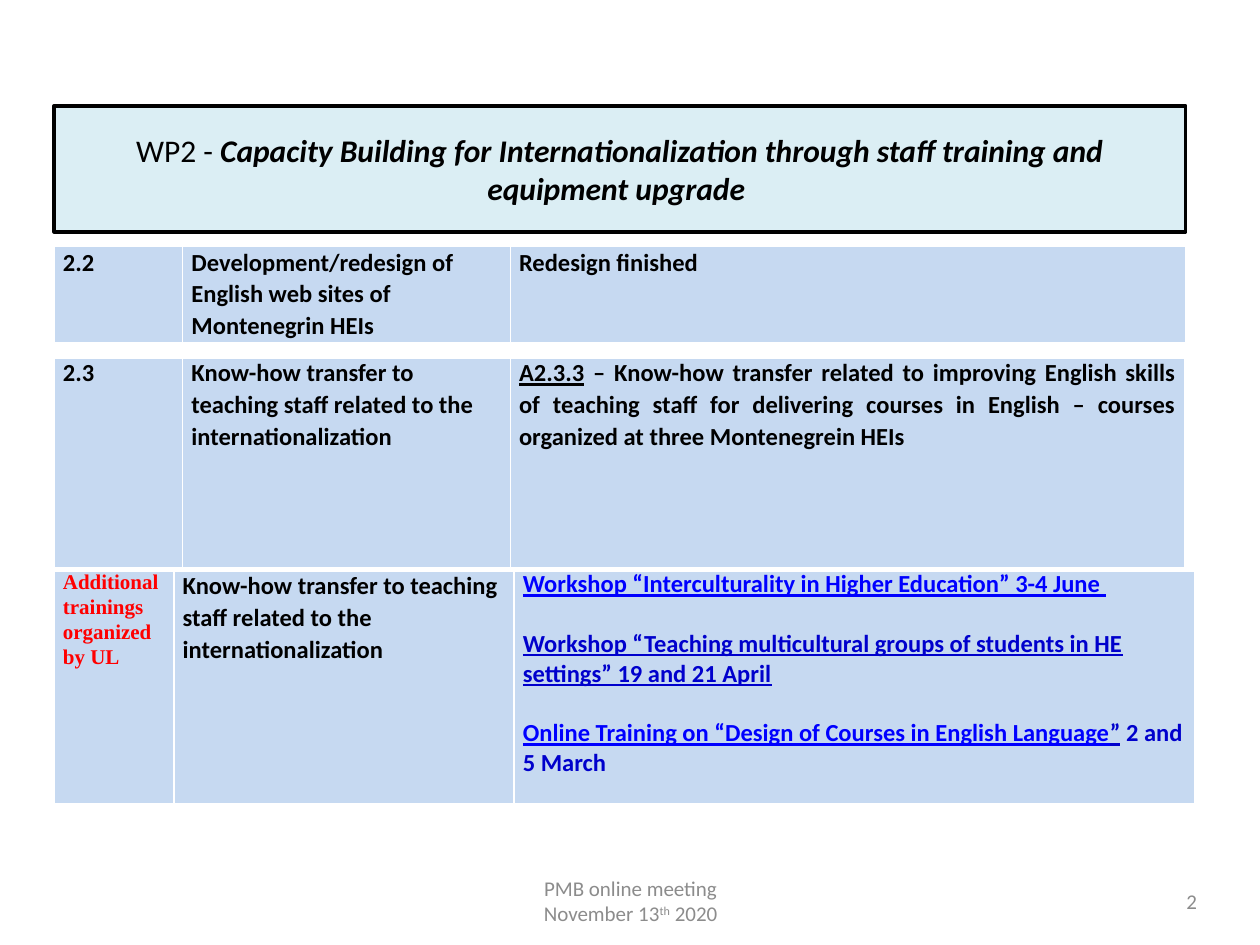
from dataclasses import dataclass

from lxml import etree
from pptx import Presentation
from pptx.dml.color import RGBColor
from pptx.enum.shapes import MSO_SHAPE
from pptx.enum.text import MSO_ANCHOR, PP_ALIGN
from pptx.oxml.ns import qn
from pptx.util import Inches, Pt

RECTANGLE = MSO_SHAPE.RECTANGLE
MIDDLE = MSO_ANCHOR.MIDDLE
LEFT, CENTER, RIGHT = PP_ALIGN.LEFT, PP_ALIGN.CENTER, PP_ALIGN.RIGHT
JUSTIFY = PP_ALIGN.JUSTIFY


@dataclass(frozen=True)
class Theme:
    font: str = "Calibri"
    accent_font: str = "Times New Roman"
    ink: str = "000000"
    muted: str = "8C8C8C"
    alert: str = "FF0000"
    link: str = "0000FF"
    link_dark: str = "0000CC"
    banner: str = "DBEEF4"
    cell: str = "C6D9F1"
    border: str = "FFFFFF"
    title_size: int = 18
    body_size: int = 14
    small_size: int = 12


@dataclass
class Span:
    text: str
    color: str = ""
    underline: bool = False
    emphasis: bool = False
    superscript: bool = False


@dataclass
class Para:
    spans: list
    size: int
    color: str
    font: str = Theme.font
    bold: bool = False
    align: PP_ALIGN = LEFT
    line: float = 1.0
    before: int = 0


class SlideBuilder:
    def __init__(self, page, theme):
        self.page = page
        self.theme = theme

    def fill_text(self, frame, paras):
        frame.word_wrap = True
        for index, item in enumerate(paras):
            para = frame.add_paragraph() if index else frame.paragraphs[0]
            para.alignment = item.align
            para.line_spacing = item.line
            para.space_before = Pt(item.before)
            para.font.name = item.font
            para.font.size = Pt(item.size)
            para.font.bold = item.bold
            para.font.color.rgb = RGBColor.from_string(item.color)
            for part in item.spans:
                span = para.add_run()
                span.text = part.text
                if part.color:
                    span.font.color.rgb = RGBColor.from_string(part.color)
                if part.underline:
                    span.font.underline = True
                if part.emphasis:
                    span.font.bold = span.font.italic = True
                if part.superscript:
                    span.font._element.set("baseline", "30000")

    def text(self, left, top, width, height, paras, left_inset=0):
        box = self.page.shapes.add_textbox(
            Inches(left), Inches(top), Inches(width), Inches(height))
        frame = box.text_frame
        frame.vertical_anchor = MIDDLE
        frame.margin_left, frame.margin_right = Inches(left_inset), 0
        self.fill_text(frame, paras)

    def banner(self, left, top, width, height, para):
        box = self.page.shapes.add_shape(
            RECTANGLE, Inches(left), Inches(top), Inches(width), Inches(height))
        box.shadow.inherit = False
        box.fill.solid()
        box.fill.fore_color.rgb = RGBColor.from_string(self.theme.banner)
        box.line.color.rgb = RGBColor.from_string(self.theme.ink)
        box.line.width = Pt(2)
        box.text_frame.vertical_anchor = MIDDLE
        self.fill_text(box.text_frame, [para])

    def border(self, cell):
        properties = cell._tc.get_or_add_tcPr()
        for side, width in (("L", 1), ("R", 1), ("T", 3), ("B", 3)):
            line = etree.SubElement(properties, qn(f"a:ln{side}"), w=str(Pt(width)))
            fill = etree.SubElement(line, qn("a:solidFill"))
            etree.SubElement(fill, qn("a:srgbClr"), val=self.theme.border)

    def row_table(self, left, top, height, widths, contents, top_inset=0):
        table = self.page.shapes.add_table(
            1, len(widths), Inches(left), Inches(top),
            Inches(sum(widths)), Inches(height)).table
        table.first_row = table.horz_banding = False
        table.rows[0].height = Inches(height)
        for column, width, cell, paras in zip(
                table.columns, widths, table.rows[0].cells, contents):
            column.width = Inches(width)
            cell.margin_left = cell.margin_right = Inches(0.07)
            cell.margin_top, cell.margin_bottom = Inches(top_inset), 0
            self.border(cell)
            cell.fill.solid()
            cell.fill.fore_color.rgb = RGBColor.from_string(self.theme.cell)
            self.fill_text(cell.text_frame, paras)


def main():
    theme = Theme()
    deck = Presentation()
    deck.slide_width, deck.slide_height = Inches(10), Inches(7.5)
    builder = SlideBuilder(deck.slides.add_slide(deck.slide_layouts[6]), theme)

    def footer(align, *spans):
        return Para(spans, theme.small_size, theme.muted, align=align)

    def body(*spans, align=LEFT):
        return [Para(spans, theme.body_size, theme.ink, bold=True,
                     align=align, line=1.07)]

    def workshop(*spans, before=17):
        return Para(spans, theme.body_size, theme.link_dark, bold=True, before=before)

    left = 0.43
    know_how = body(Span("Know-how transfer to teaching staff related to the "
                         "internationalization"))

    builder.text(2.09, 6.95, 5.83, 0.4, [
        footer(CENTER, Span("PMB online meeting")),
        footer(CENTER, Span("November 13"), Span("th", superscript=True),
               Span(" 2020"))])
    builder.text(7.99, 6.95, 1.51, 0.4, [footer(RIGHT, Span("2"))], left_inset=0.1)

    builder.banner(left, 0.84, 8.98, 1, Para(
        [Span("WP2 - "),
         Span("Capacity Building for Internationalization through staff training "
              "and equipment upgrade ", emphasis=True)],
        theme.title_size, theme.ink, align=CENTER))

    builder.row_table(left, 1.94, 0.79, [1.02, 2.6, 5.36], [
        body(Span("2.2")),
        body(Span("Development/redesign of English web sites of Montenegrin HEIs")),
        body(Span("Redesign finished"))], top_inset=0.01)

    builder.row_table(left, 2.83, 1.88, [1.02, 2.6, 5.35], [
        body(Span("2.3")),
        know_how,
        body(Span("A2.3.3", underline=True),
             Span(" – Know-how transfer related to improving English skills of "
                  "teaching staff for delivering courses in English – courses "
                  "organized at three Montenegrein HEIs"), align=JUSTIFY)])

    builder.row_table(left, 4.52, 1.87, [0.95, 2.7, 5.4], [
        [Para([Span("Additional trainings organized by UL")], theme.small_size,
              theme.alert, font=theme.accent_font, bold=True, line=1.07)],
        know_how,
        [workshop(Span("Workshop “Interculturality in Higher Education” 3-4 June ",
                       theme.link, underline=True), before=0),
         workshop(Span("Workshop “Teaching multicultural groups of students in HE "
                       "settings” 19 and 21 April", underline=True)),
         workshop(Span("Online Training on “Design of Courses in English Language",
                       theme.link, underline=True),
                  Span("”", underline=True),
                  Span(" 2 and 5 March"))]])

    deck.save("out.pptx")


if __name__ == "__main__":
    main()
